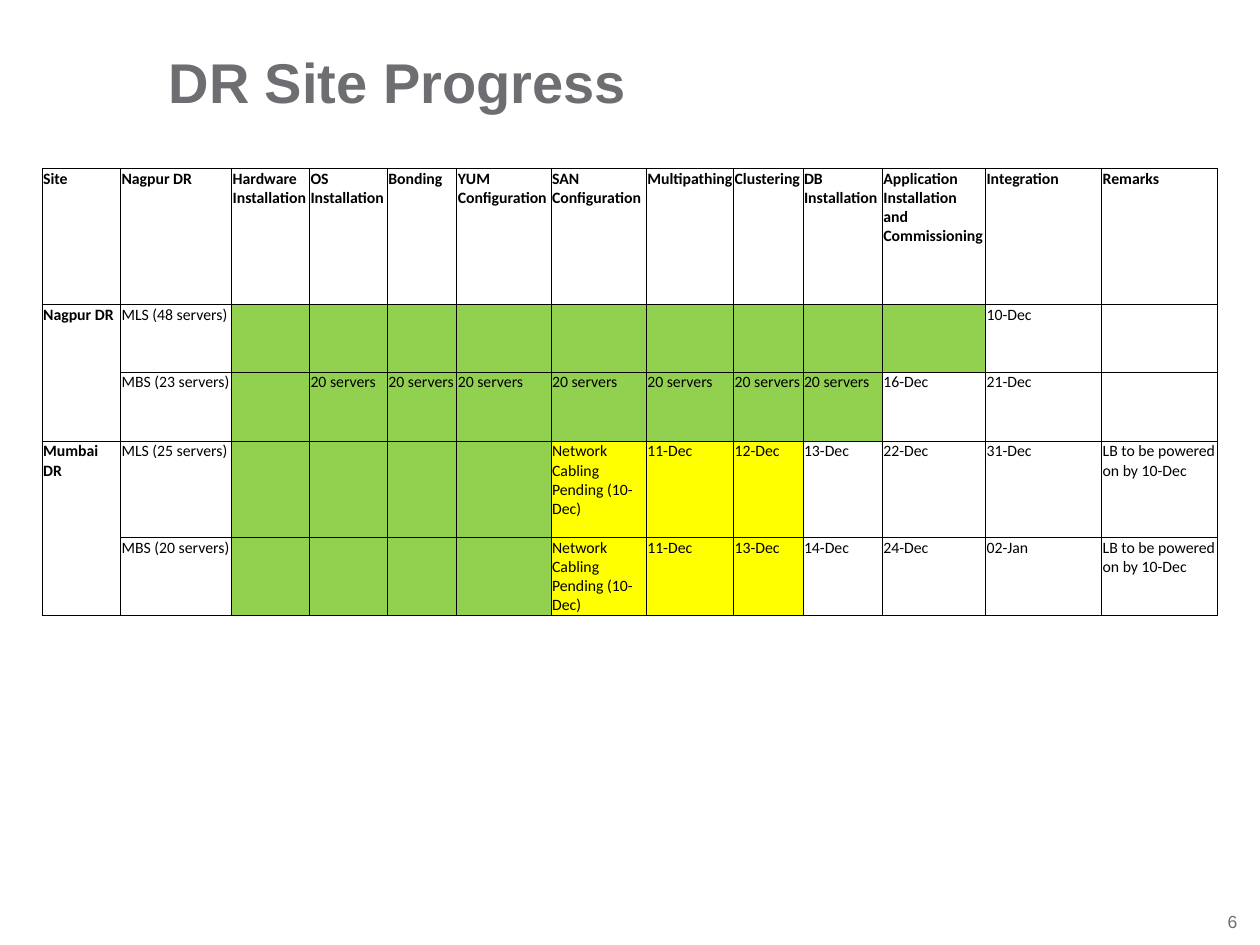
from lxml import etree
from pptx import Presentation
from pptx.dml.color import RGBColor
from pptx.enum import text
from pptx.oxml import ns
from pptx.util import Cm, Pt

COLORS = {"grey": "6D6E71", "black": "000000", "green": "92D050", "yellow": "FFFF00"}


def write(tf, words, size=9, font="Calibri", color="black", bold=False,
          align=text.PP_ALIGN.LEFT):
    p = tf.paragraphs[0]
    p.alignment = align
    r = p.add_run()
    r.text = words
    r.font.size = Pt(size)
    r.font.name = font
    r.font.bold = bold
    r.font.color.rgb = RGBColor.from_string(COLORS[color])


def add_borders(cell):
    tcPr = cell._tc.get_or_add_tcPr()
    for i, side in enumerate(("lnL", "lnR", "lnT", "lnB")):
        ln = etree.Element(ns.qn(f"a:{side}"), w=str(Pt(0.5)))
        fill = etree.SubElement(ln, ns.qn("a:solidFill"))
        etree.SubElement(fill, ns.qn("a:srgbClr"), val=COLORS["black"])
        tcPr.insert(i, ln)


prs = Presentation()
prs.slide_width, prs.slide_height = Cm(25.4), Cm(19.05)
s = prs.slides.add_slide(prs.slide_layouts[6])

labels = [
    ("DR Site Progress", (3.4, 0.95, 19.46, 1.37), text.MSO_ANCHOR.TOP,
     dict(size=32, bold=True)),
    ("6", (24.51, 18.36, 0.43, 0.43), text.MSO_ANCHOR.MIDDLE,
     dict(size=10, align=text.PP_ALIGN.RIGHT)),
]
for words, box, anchor, style in labels:
    sp = s.shapes.add_textbox(*map(Cm, box))
    tf = sp.text_frame
    tf.word_wrap = True
    tf.vertical_anchor = anchor
    tf.margin_left = tf.margin_right = tf.margin_top = tf.margin_bottom = 0
    write(tf, words, font="Arial", color="grey", **style)

pending = "Network Cabling Pending (10-Dec)"
remark = "LB to be powered on by 10-Dec"
rows = [
    ["Site", "Nagpur DR", "Hardware Installation", "OS Installation", "Bonding",
     "YUM Configuration", "SAN Configuration", "Multipathing", "Clustering",
     "DB Installation", "Application Installation and Commissioning",
     "Integration", "Remarks"],
    ["Nagpur DR", "MLS (48 servers)"] + [""] * 9 + ["10-Dec", ""],
    ["", "MBS (23 servers)", ""] + ["20 servers"] * 7 + ["16-Dec", "21-Dec", ""],
    ["Mumbai DR", "MLS (25 servers)"] + [""] * 4
    + [pending, "11-Dec", "12-Dec", "13-Dec", "22-Dec", "31-Dec", remark],
    ["", "MBS (20 servers)"] + [""] * 4
    + [pending, "11-Dec", "13-Dec", "14-Dec", "24-Dec", "02-Jan", remark],
]
green_end = [2, 11, 10, 6, 6]
yellow_end = [2, 11, 10, 9, 9]
widths = [1.58, 2.24, 1.57, 1.57, 1.4, 1.9, 1.92, 1.76, 1.4, 1.6, 2.08, 2.34, 2.34]
heights = [2.74, 1.37, 1.39, 1.94, 1.57]

frame = s.shapes.add_table(len(rows), len(widths), Cm(0.85), Cm(3.39),
                           Cm(sum(widths)), Cm(sum(heights)))
table = frame.table
table.first_row = table.horz_banding = False
for col, width in zip(table.columns, widths):
    col.width = Cm(width)
for row, height in zip(table.rows, heights):
    row.height = Cm(height)

for i, row in enumerate(rows):
    for j, words in enumerate(row):
        cell = table.cell(i, j)
        cell.margin_left = cell.margin_right = cell.margin_top = Cm(0.02)
        cell.margin_bottom = 0
        if 2 <= j < yellow_end[i]:
            color = "green" if j < green_end[i] else "yellow"
            cell.fill.solid()
            cell.fill.fore_color.rgb = RGBColor.from_string(COLORS[color])
        else:
            cell.fill.background()
        add_borders(cell)
        if words:
            write(cell.text_frame, words, bold=i == 0 or j == 0)

for i in (1, 3):
    table.cell(i, 0).merge(table.cell(i + 1, 0))

prs.save("out.pptx")
